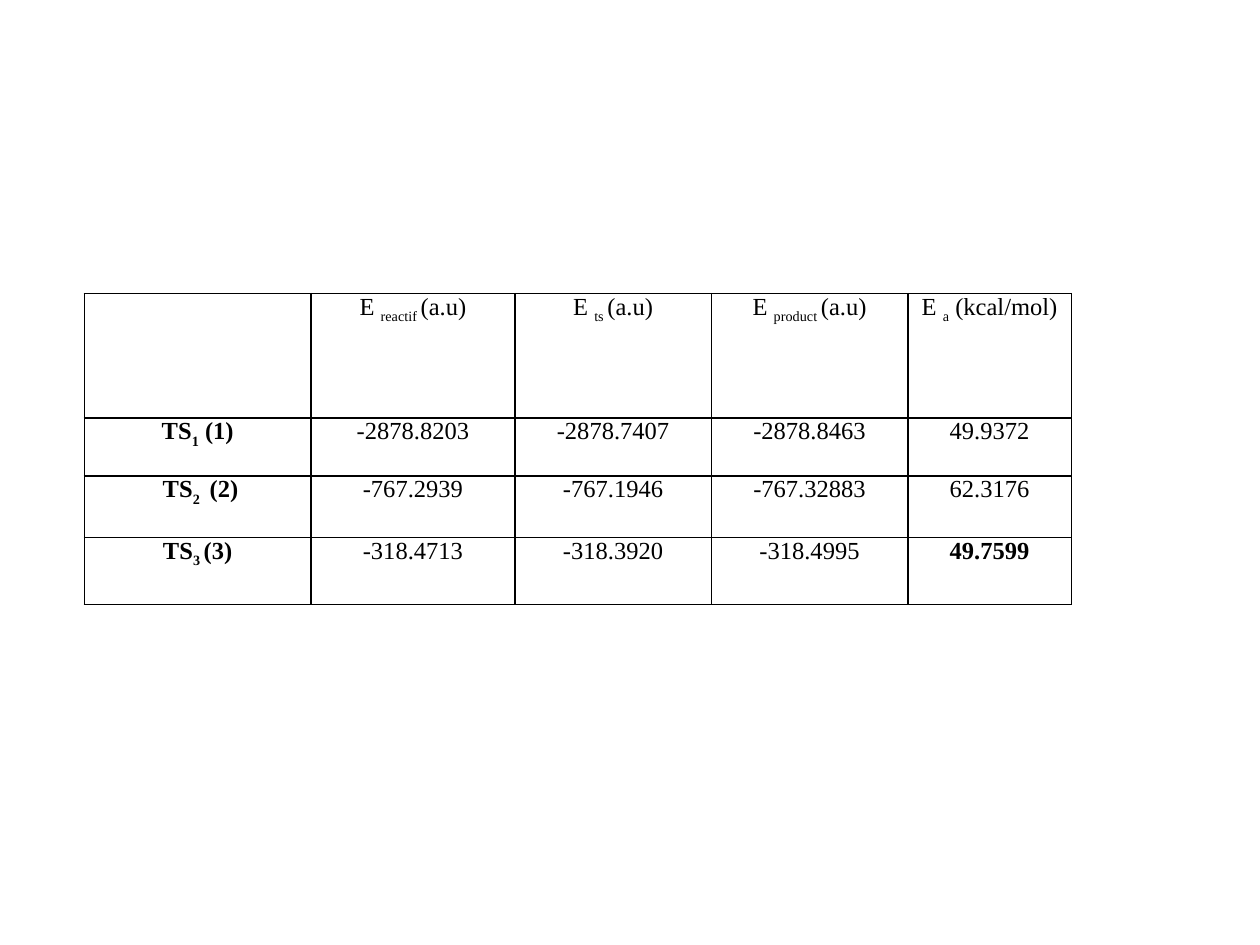
from dataclasses import dataclass

import pptx
import pptx.dml.color
import pptx.enum.text
import pptx.oxml
import pptx.oxml.ns
import pptx.util
from pptx.util import Cm


@dataclass(frozen=True)
class Theme:
    font: str = "Times New Roman"
    size: int = 14
    ink: str = "000000"
    border: float = 1
    subscript: int = -25000


THEME = Theme()
COLUMN_WIDTHS = [4.57, 4.11, 3.96, 3.96, 3.3]
ROW_HEIGHTS = [2.51, 1.17, 1.24, 1.35]
HEADINGS = [
    (),
    ("E ", "reactif ", "(a.u)"),
    ("E ", "ts ", "(a.u)"),
    ("E ", "product ", "(a.u)"),
    ("E ", "a", " (kcal/mol)"),
]
TRANSITION_STATES = [
    [("TS", "1", " (1)"), ("-2878.8203",), ("-2878.7407",), ("-2878.8463",), ("49.9372",)],
    [(" TS", "2 ", " (2)"), ("-767.2939",), ("-767.1946",), ("-767.32883",), ("62.3176",)],
    [("TS", "3 ", "(3)"), ("-318.4713",), ("-318.3920",), ("-318.4995",), ("49.7599",)],
]
LOWEST_BARRIER = (3, 4)


def add_run(paragraph, text, bold, subscript):
    run = paragraph.add_run()
    run.text = text
    run.font.name = THEME.font
    run.font.size = pptx.util.Pt(THEME.size)
    run.font.bold = bold
    run.font.color.rgb = pptx.dml.color.RGBColor.from_string(THEME.ink)
    if subscript:
        run._r.get_or_add_rPr().set("baseline", str(THEME.subscript))


def add_borders(cell):
    properties = cell._tc.get_or_add_tcPr()
    for side in ("lnL", "lnR", "lnT", "lnB"):
        properties.append(pptx.oxml.parse_xml(
            f'<a:{side} {pptx.oxml.ns.nsdecls("a")} w="{pptx.util.Pt(THEME.border)}">'
            f'<a:solidFill><a:srgbClr val="{THEME.ink}"/></a:solidFill></a:{side}>'
        ))


def fill_cell(cell, parts, bold):
    add_borders(cell)
    cell.fill.background()
    cell.margin_left = cell.margin_right = Cm(0.18)
    cell.margin_top = cell.margin_bottom = 0
    paragraph = cell.text_frame.paragraphs[0]
    paragraph.alignment = pptx.enum.text.PP_ALIGN.CENTER
    for position, text in enumerate(parts):
        add_run(paragraph, text, bold, subscript=position == 1)


def add_energy_table(slide, left, top):
    rows = [HEADINGS, *TRANSITION_STATES]
    energies = slide.shapes.add_table(
        len(rows), len(HEADINGS), Cm(left), Cm(top),
        Cm(sum(COLUMN_WIDTHS)), Cm(sum(ROW_HEIGHTS)),
    ).table
    energies.first_row = energies.horz_banding = False
    for column, width in zip(energies.columns, COLUMN_WIDTHS):
        column.width = Cm(width)
    for row, height in zip(energies.rows, ROW_HEIGHTS):
        row.height = Cm(height)
    for r, row in enumerate(rows):
        for c, parts in enumerate(row):
            bold = (r > 0 and c == 0) or (r, c) == LOWEST_BARRIER
            fill_cell(energies.cell(r, c), parts, bold)


def main():
    presentation = pptx.Presentation()
    presentation.slide_width = Cm(25.4)
    presentation.slide_height = Cm(19.05)
    slide = presentation.slides.add_slide(presentation.slide_layouts[6])
    add_energy_table(slide, left=1.7, top=5.92)
    presentation.save("out.pptx")


if __name__ == "__main__":
    main()
